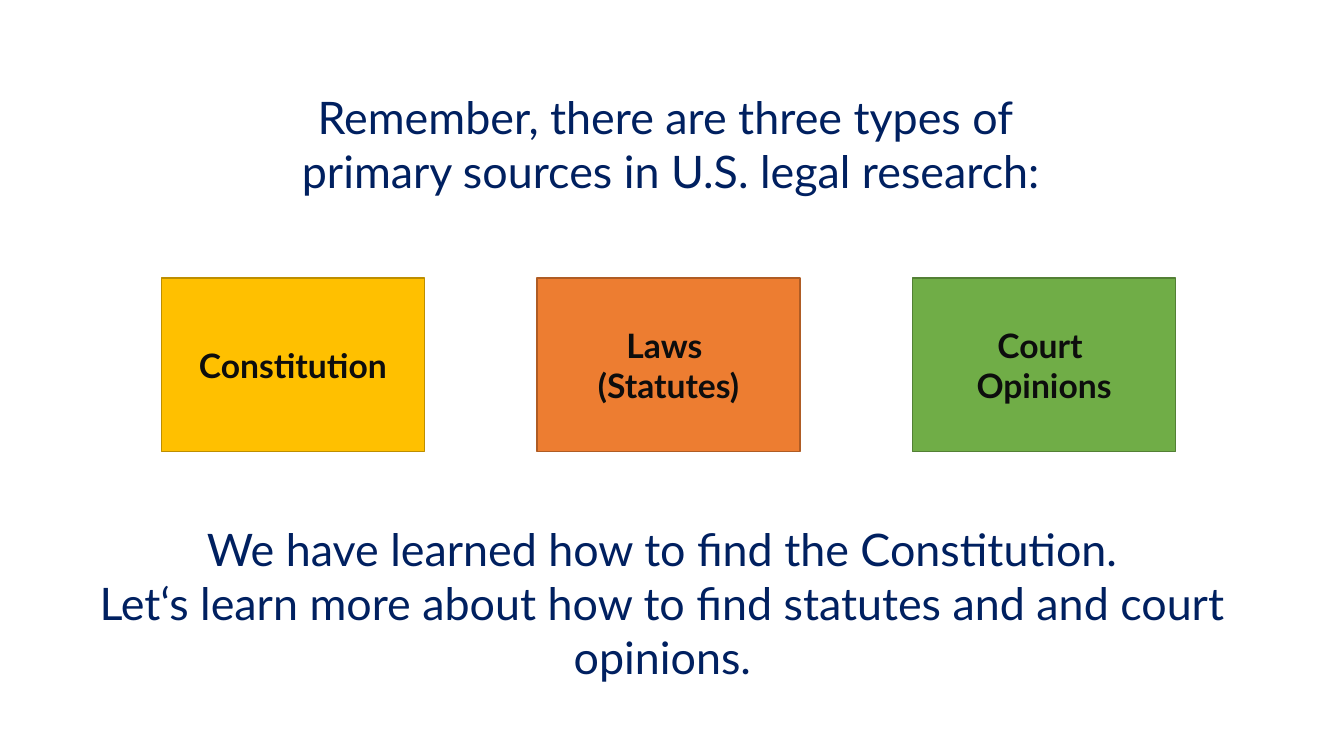
"""Build a slide on the three primary sources of U.S. legal research."""
from pptx import Presentation
from pptx.dml.color import RGBColor
from pptx.enum.shapes import MSO_SHAPE
from pptx.enum.text import MSO_ANCHOR, MSO_AUTO_SIZE, PP_ALIGN
from pptx.util import Inches, Pt

RECTANGLE = MSO_SHAPE.RECTANGLE
MIDDLE = MSO_ANCHOR.MIDDLE
GROW = MSO_AUTO_SIZE.SHAPE_TO_FIT_TEXT
CENTER = PP_ALIGN.CENTER

STATEMENT = {"font": {"name": "Lato", "size": Pt(32), "bold": False}, "color": "002060"}
LABEL = {"font": {"name": "Lato", "size": Pt(24), "bold": True}, "color": "0D0D0D"}

INTRODUCTION = ["Remember, there are three types of \nprimary sources in U.S. legal research:"]
CONCLUSION = [
    "We have learned how to find the Constitution.",
    "Let‘s learn more about how to find statutes and and court opinions.",
]
SOURCES = [
    ("Constitution", "FFC000", "BD8E00"),
    ("Laws \n(Statutes)", "ED7D31", "AF5C24"),
    ("Court \nOpinions", "70AD47", "538035"),
]
FIRST_LEFT = 1.6
BOX_STEP = 3.725


def rgb(value):
    """Return the colour for a hex string."""
    return RGBColor.from_string(value)


def write_paragraphs(text_frame, texts, style):
    """Fill a text frame with centred paragraphs in one style."""
    text_frame.word_wrap = True
    for index, text in enumerate(texts):
        paragraph = text_frame.add_paragraph() if index else text_frame.paragraphs[0]
        paragraph.text = text.replace("\n", "\v")
        paragraph.alignment = CENTER
        for run in paragraph.runs:
            for name, value in style["font"].items():
                setattr(run.font, name, value)
            run.font.color.rgb = rgb(style["color"])


def add_statement(slide, texts, left, top, width):
    """Add a large centred text box."""
    shape = slide.shapes.add_textbox(Inches(left), Inches(top), Inches(width), Inches(1.18))
    write_paragraphs(shape.text_frame, texts, STATEMENT)
    shape.text_frame.auto_size = GROW


def add_source_box(slide, left, label, fill, line):
    """Add a coloured rectangle naming one primary source."""
    shape = slide.shapes.add_shape(
        RECTANGLE, Inches(left), Inches(2.76), Inches(2.61), Inches(1.72)
    )
    shape.shadow.inherit = False
    shape.fill.solid()
    shape.fill.fore_color.rgb = rgb(fill)
    shape.line.color.rgb = rgb(line)
    shape.line.width = Pt(1)
    shape.text_frame.vertical_anchor = MIDDLE
    write_paragraphs(shape.text_frame, [label], LABEL)


def main():
    """Create the presentation and save it."""
    presentation = Presentation()
    presentation.slide_width = Inches(13.33)
    presentation.slide_height = Inches(7.5)
    slide = presentation.slides.add_slide(presentation.slide_layouts[6])
    add_statement(slide, INTRODUCTION, 0.88, 0.84, 11.55)
    for index, (label, fill, line) in enumerate(SOURCES):
        add_source_box(slide, FIRST_LEFT + index * BOX_STEP, label, fill, line)
    add_statement(slide, CONCLUSION, 0.27, 5.13, 12.6)
    presentation.save("out.pptx")


if __name__ == "__main__":
    main()
